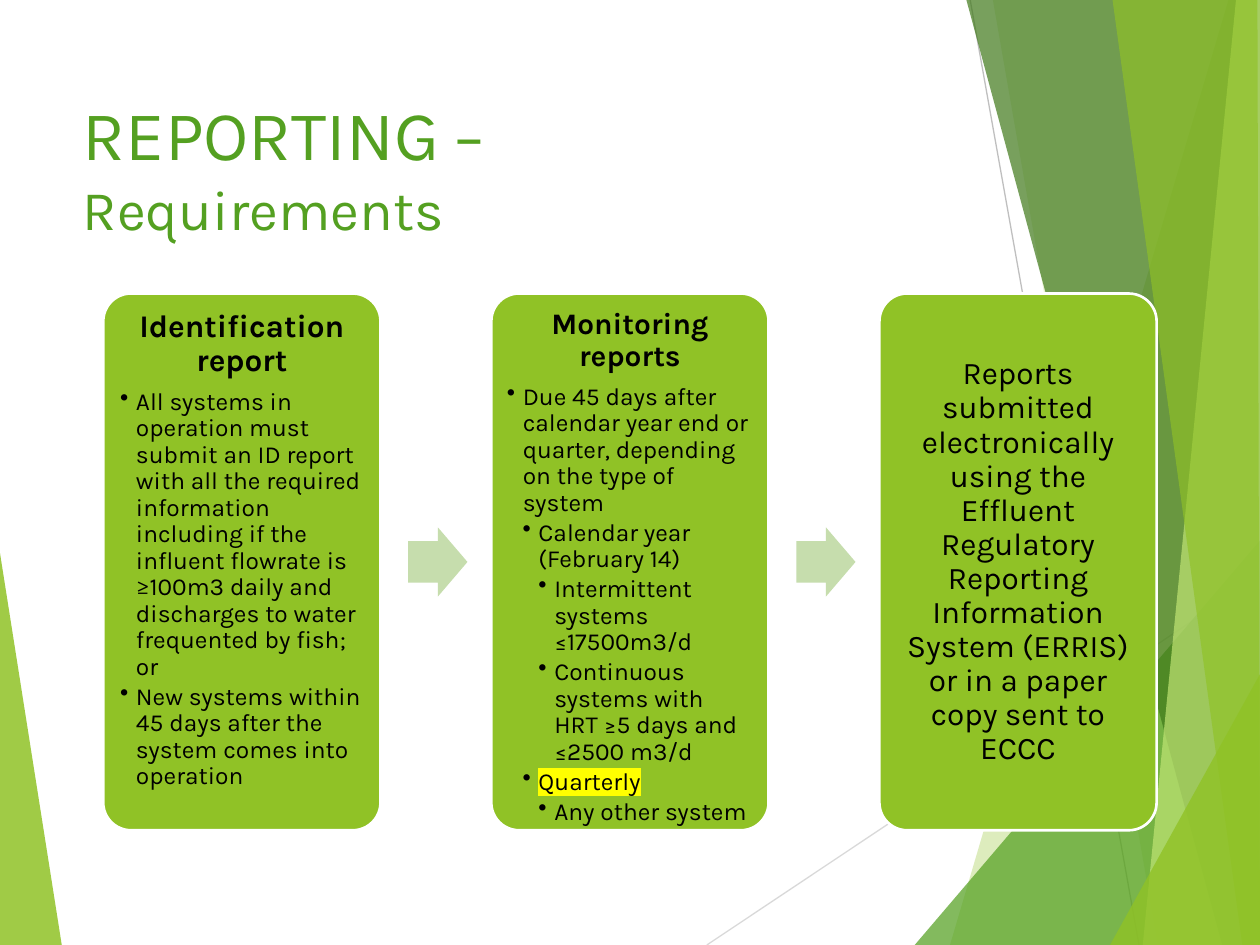
from lxml.etree import SubElement
from pptx import Presentation
from pptx.dml.color import RGBColor
from pptx.enum.shapes import MSO_CONNECTOR, MSO_SHAPE
from pptx.enum.text import MSO_ANCHOR, PP_ALIGN
from pptx.oxml.ns import qn
from pptx.util import Inches, Pt

COLORS = {
    "lime": "90C226", "green": "54A021", "forest": "3F7819",
    "pale": "C0E474", "arrow": "C6DDAD", "white": "FFFFFF",
    "black": "000000", "marker": "FFFF00",
    "light_gray": "D9D9D9", "gray": "BFBFBF",
}
FONT = "Karla"
SYMBOL_FONT = "Cambria"

LEFT_FACET = ([(0, 4.39), (0.49, 7.5), (0, 7.5)], "lime", 85)
RIGHT_FACETS = [
    ([(9.75, 0), (7.54, 7.5), (10, 7.5), (10, 0)], "lime", 30),
    ([(7.88, 0), (9.19, 7.5), (10, 7.5), (10, 0)], "lime", 20),
    ([(7.26, 7.5), (10, 4.29), (10, 7.5)], "green", 72),
    ([(7.67, 0), (9.7, 7.5), (10, 7.5), (10, 0)], "forest", 70),
    ([(9.81, 0), (9.07, 7.5), (10, 7.5), (10, 0)], "pale", 70),
    ([(8.83, 0), (9.86, 7.5), (10, 7.5), (9.98, 0)], "lime", 65),
    ([(8.81, 7.5), (10, 5.35), (10, 7.5)], "lime", 80),
]
RAYS = [((5.61, 7.5), (10, 4.57), "light_gray"),
        ((7.7, 0), (9.04, 7.5), "gray")]

CARD_LEFT, CARD_TOP, CARD_WIDTH, CARD_HEIGHT = 0.82, 2.33, 2.2, 4.26
CARD_PITCH = 3.08
ARROW_OFFSET, ARROW_WIDTH, ARROW_HEIGHT = 2.42, 0.47, 0.55

IDENTIFICATION = [
    (1, ["All systems in operation must submit an ID report with all the "
         "required information including if the influent flowrate is ", "≥",
         "100m3 daily and discharges to water frequented by fish; or"]),
    (1, ["New systems within 45 days after the system comes into operation"]),
]
MONITORING = [
    (1, ["Due 45 days after calendar year end or quarter, depending on the "
         "type of system"]),
    (2, ["Calendar year (February 14)"]),
    (3, ["Intermittent systems ≤17500m3/d"]),
    (3, ["Continuous systems with HRT ≥5 days and ≤2500 m3/d"]),
    (2, ["Quarterly"]),
    (3, ["Any other system"]),
]
SUBMISSION = ("Reports submitted electronically using the Effluent Regulatory "
              "Reporting Information System (ERRIS) or in a paper copy sent "
              "to ECCC")
CARDS = [
    ("Identification report", 18, True, IDENTIFICATION, MSO_ANCHOR.TOP, 0.07),
    ("Monitoring reports", 17, True, MONITORING, MSO_ANCHOR.TOP, 0.06),
    (SUBMISSION, 18, False, [], MSO_ANCHOR.MIDDLE, 0.07),
]


def color(name):
    """Return the named palette color."""
    return RGBColor.from_string(COLORS[name])


def paint(shape, fill):
    """Give a shape a flat fill without outline or shadow."""
    shape.shadow.inherit = False
    shape.fill.solid()
    shape.fill.fore_color.rgb = color(fill)
    shape.line.fill.background()


def add_facet(page, points, fill, opacity):
    """Draw a translucent polygon."""
    corners = [(Inches(x), Inches(y)) for x, y in points]
    builder = page.shapes.build_freeform(*corners[0])
    builder.add_line_segments(corners[1:], close=True)
    facet = builder.convert_to_shape()
    paint(facet, fill)
    tone = facet._element.spPr.find(qn("a:solidFill"))[0]
    SubElement(tone, qn("a:alpha"), val=str(opacity * 1000))


def add_ray(page, start, end, tone):
    """Draw a thin background line."""
    ends = [Inches(value) for value in (*start, *end)]
    ray = page.shapes.add_connector(MSO_CONNECTOR.STRAIGHT, *ends)
    ray.line.color.rgb = color(tone)
    ray.line.width = Pt(0.75)
    SubElement(ray._element.spPr, qn("a:effectLst"))


def style_font(font, size, tone, bold=False):
    """Set the slide font with a size and color."""
    font.name = FONT
    font.size = Pt(size)
    font.bold = bold
    font.color.rgb = color(tone)


def add_title(page):
    """Write the two-line title."""
    box = page.shapes.add_textbox(Inches(0.56), Inches(0.67),
                                  Inches(7.05), Inches(1.44))
    box.text_frame.word_wrap = True
    para = box.text_frame.paragraphs[0]
    for text, size in (("REPORTING", 40), (" –", 36), ("\n", 36),
                       ("Requirements", 32)):
        if text == "\n":
            para.add_line_break()
            continue
        span = para.add_run()
        span.text = text
        style_font(span.font, size, "green")


def add_bullet(frame, level, texts):
    """Append a bulleted paragraph indented by its level."""
    para = frame.add_paragraph()
    para.level = level
    para.alignment = PP_ALIGN.LEFT
    para.line_spacing = 0.9
    para.space_after = Pt(2)
    props = para._p.get_or_add_pPr()
    props.set("marL", str(Inches(0.125 * level)))
    props.set("indent", str(-Inches(0.125)))
    SubElement(props, qn("a:buChar"), char="•")
    style_font(para.font, 14, "black")
    for text in texts:
        span = para.add_run()
        span.text = text
        if text == "≥":
            span.font.name = SYMBOL_FONT
        if text == "Quarterly":
            marker = SubElement(span._r.get_or_add_rPr(), qn("a:highlight"))
            SubElement(marker, qn("a:srgbClr"), val=COLORS["marker"])


def add_card(page, left, heading, size, bold, bullets, anchor, inset):
    """Draw a rounded card with a heading and bullets."""
    card = page.shapes.add_shape(
        MSO_SHAPE.ROUNDED_RECTANGLE, Inches(left), Inches(CARD_TOP),
        Inches(CARD_WIDTH), Inches(CARD_HEIGHT))
    card.adjustments[0] = 0.1
    paint(card, "lime")
    card.line.color.rgb = color("white")
    card.line.width = Pt(1.5)
    frame = card.text_frame
    frame.word_wrap = True
    frame.vertical_anchor = anchor
    frame.margin_left = frame.margin_right = Inches(inset)
    frame.margin_top = frame.margin_bottom = Inches(inset)
    para = frame.paragraphs[0]
    para.text = heading
    para.alignment = PP_ALIGN.CENTER
    para.line_spacing = 0.9
    para.space_after = Pt(6)
    style_font(para.font, size, "black", bold)
    for level, texts in bullets:
        add_bullet(frame, level, texts)


def add_arrow(page, left):
    """Draw the arrow that follows a card, centered on its height."""
    top = CARD_TOP + (CARD_HEIGHT - ARROW_HEIGHT) / 2
    arrow = page.shapes.add_shape(
        MSO_SHAPE.RIGHT_ARROW, Inches(left), Inches(top),
        Inches(ARROW_WIDTH), Inches(ARROW_HEIGHT))
    arrow.adjustments[0] = 0.6
    paint(arrow, "arrow")


def main():
    """Build and save the slide."""
    deck = Presentation()
    deck.slide_width, deck.slide_height = Inches(10), Inches(7.5)
    page = deck.slides.add_slide(deck.slide_layouts[6])
    add_facet(page, *LEFT_FACET)
    for ray in RAYS:
        add_ray(page, *ray)
    for facet in RIGHT_FACETS:
        add_facet(page, *facet)
    add_title(page)
    for index, card in enumerate(CARDS):
        left = CARD_LEFT + index * CARD_PITCH
        add_card(page, left, *card)
        if index < len(CARDS) - 1:
            add_arrow(page, left + ARROW_OFFSET)
    deck.save("out.pptx")


if __name__ == "__main__":
    main()
